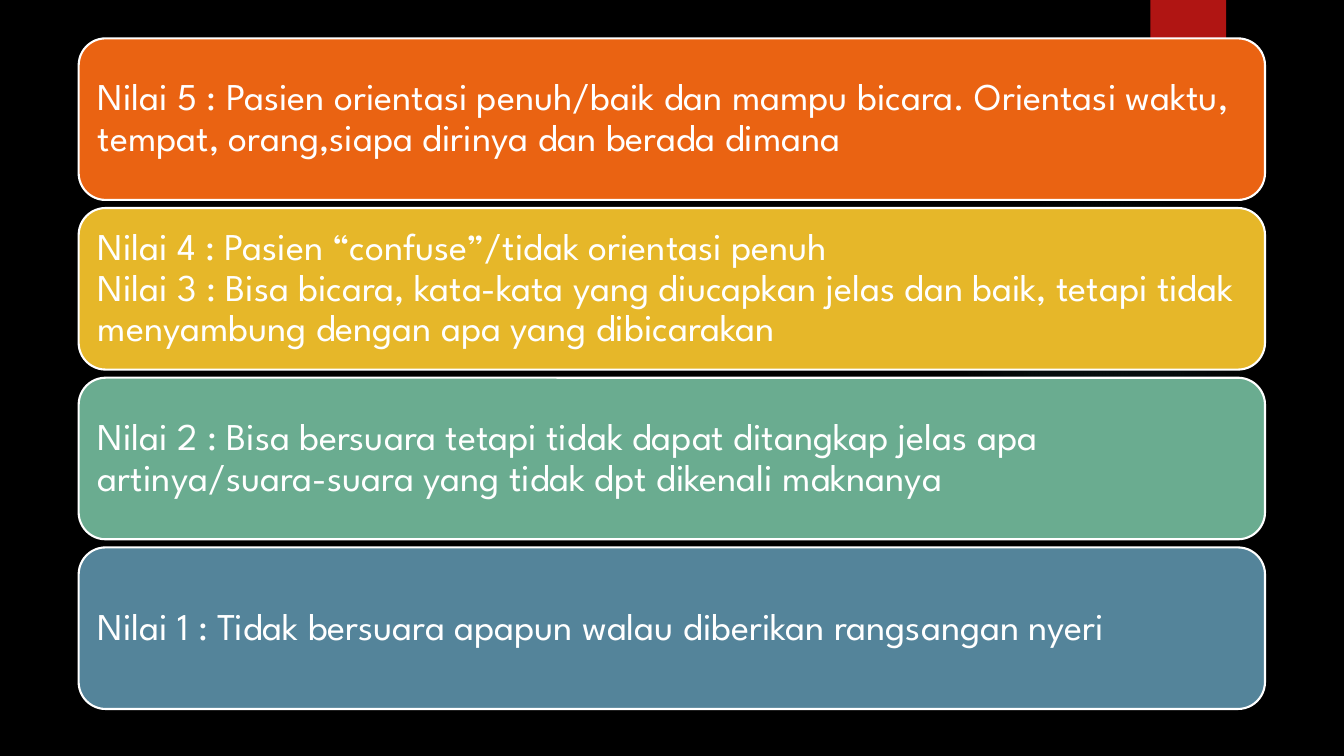
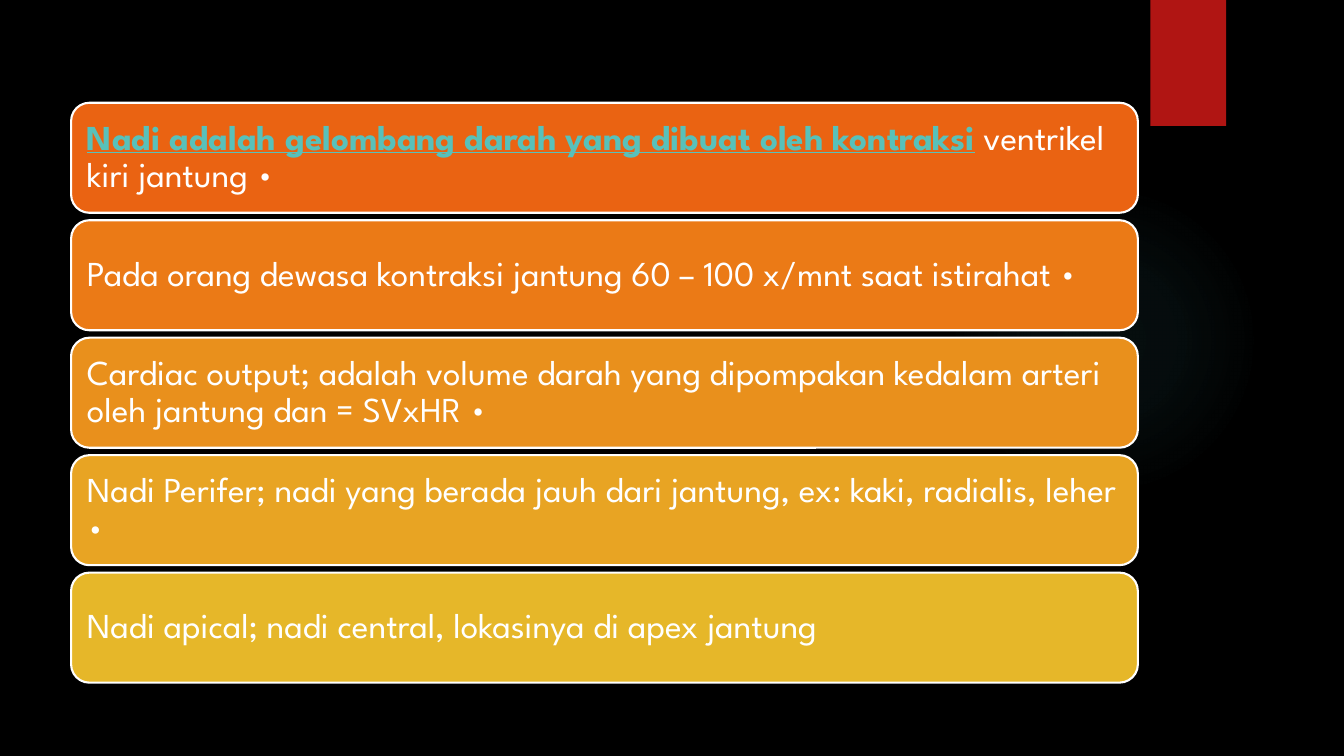
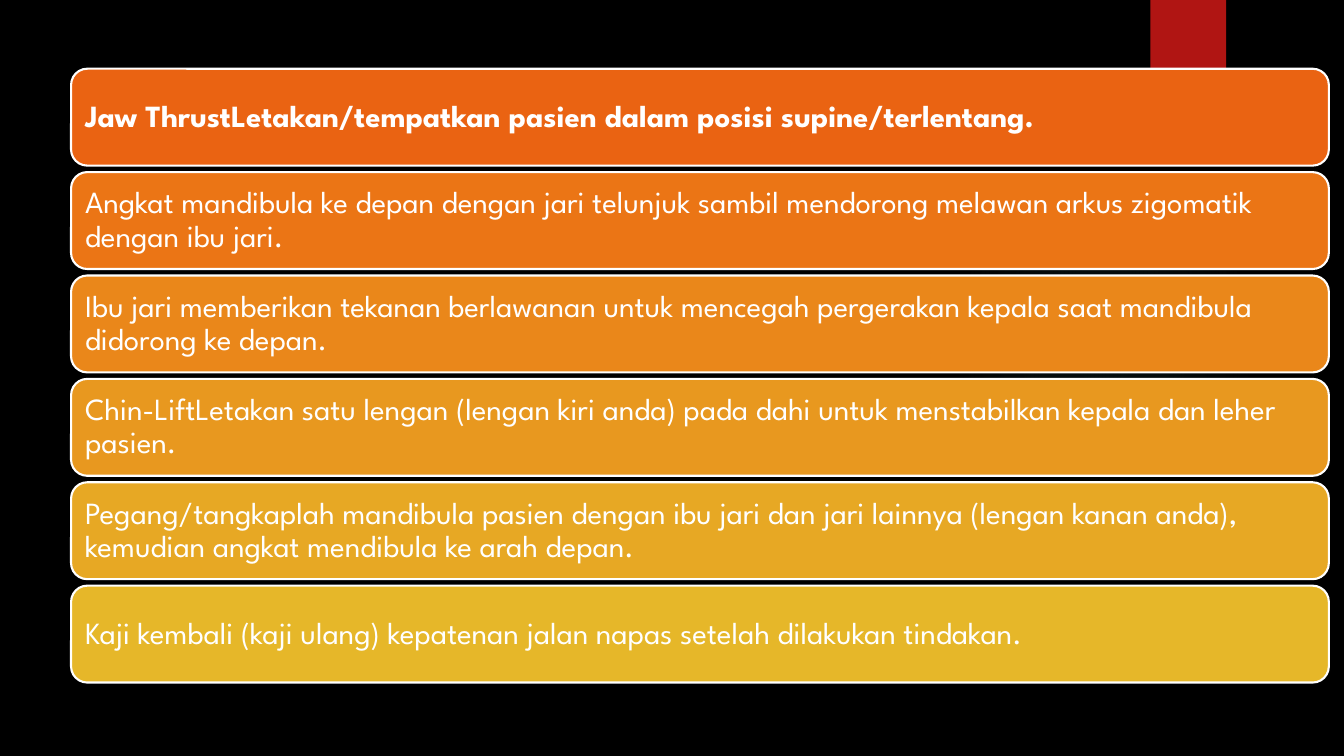
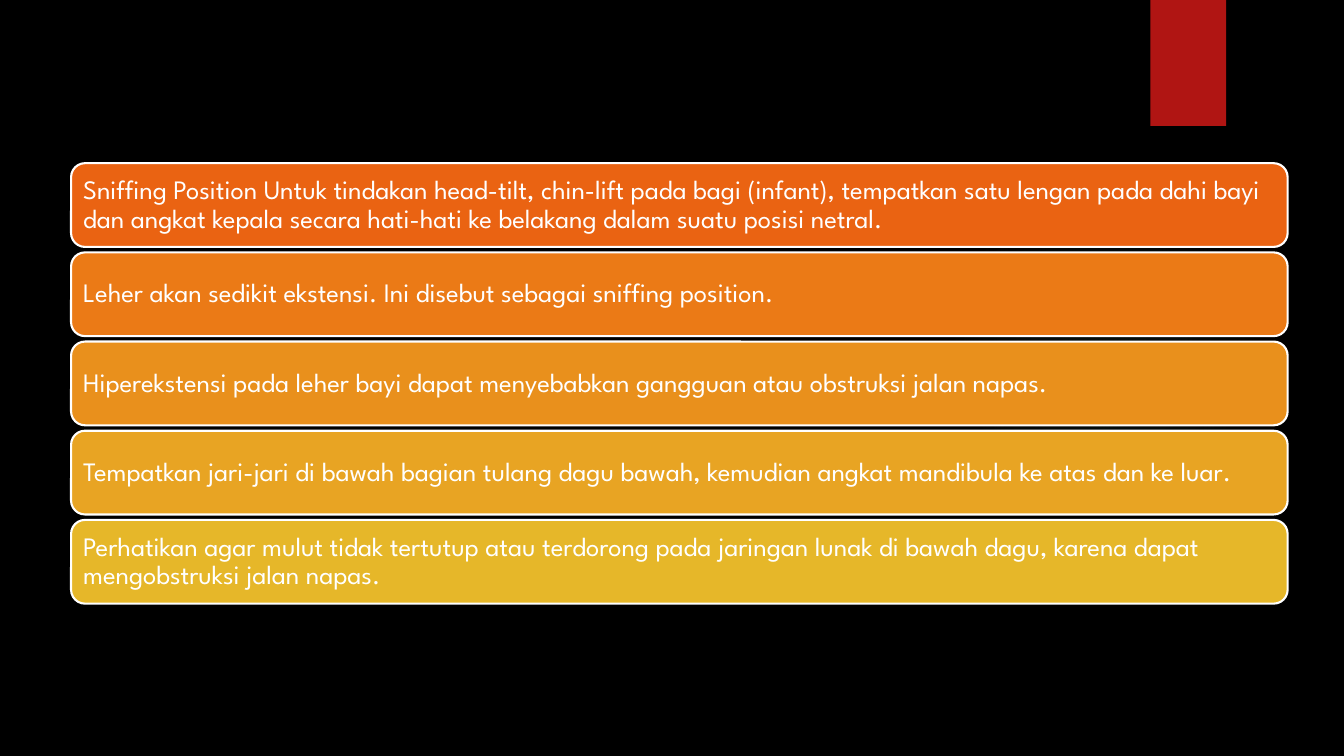
from pptx import Presentation
from pptx.dml.color import RGBColor
from pptx.enum.shapes import MSO_SHAPE
from pptx.enum.text import MSO_ANCHOR, PP_ALIGN
from pptx.oxml import parse_xml
from pptx.util import Pt

OVAL = MSO_SHAPE.OVAL
RECTANGLE = MSO_SHAPE.RECTANGLE
ROUNDED = MSO_SHAPE.ROUNDED_RECTANGLE
MIDDLE = MSO_ANCHOR.MIDDLE
LEFT = PP_ALIGN.LEFT

FONT = "League Spartan"
BLACK = "000000"
WHITE = "FFFFFF"
RED = "B01513"
TEAL = "58C1BA"
FIVE_STEPS = ["EA6312", "EB7A16", "E9901C", "E8A423", "E6B729"]
SIX_STEPS = ["EA6312", "EB7515", "EA871A", "E8981F", "E7A824", "E6B729"]

GLOW_FILL = """
<a:gradFill xmlns:a="http://schemas.openxmlformats.org/drawingml/2006/main">
  <a:gsLst>
    <a:gs pos="0"><a:srgbClr val="50B9C1"><a:alpha val="7000"/></a:srgbClr></a:gs>
    <a:gs pos="36000"><a:srgbClr val="50B9C1"><a:alpha val="6000"/></a:srgbClr></a:gs>
    <a:gs pos="69000"><a:srgbClr val="50B9C1"><a:alpha val="0"/></a:srgbClr></a:gs>
  </a:gsLst>
  <a:path path="circle"><a:fillToRect l="50000" t="50000" r="50000" b="50000"/></a:path>
</a:gradFill>
"""

# A "|" ends the opening run of a panel, "\v" breaks a line.
SLIDES = [
    {
        "left": 56.2, "top": 27.4, "width": 847.4, "height": 115.4, "pitch": 121.2,
        "size": 27,
        "colors": ["EA6312", "E6B729", "6AAC90", "54849A"],
        "texts": [
            "Nilai 5 : Pasien orientasi penuh/baik dan mampu bicara. Orientasi waktu, "
            "tempat, orang,siapa dirinya dan berada dimana",
            "Nilai 4 : Pasien “confuse”/tidak orientasi penuh\v"
            "Nilai 3 : Bisa bicara, kata-kata yang diucapkan jelas dan baik, tetapi "
            "tidak menyambung dengan apa yang dibicarakan",
            "Nilai 2 : Bisa bersuara tetapi tidak dapat ditangkap jelas apa "
            "artinya/suara-suara yang tidak dpt dikenali maknanya",
            "Nilai 1 : Tidak bersuara apapun walau diberikan rangsangan nyeri",
        ],
    },
    {
        "left": 50.8, "top": 73.4, "width": 762, "height": 78.6, "pitch": 83.9,
        "size": 25,
        "colors": FIVE_STEPS,
        "texts": [
            "Nadi adalah gelombang darah yang dibuat oleh kontraksi|"
            " ventrikel kiri jantung •",
            "Pada orang dewasa kontraksi jantung 60 – 100 x/mnt saat istirahat •",
            "Cardiac output; adalah volume darah yang dipompakan kedalam arteri oleh "
            "jantung dan = SVxHR •",
            "Nadi Perifer; nadi yang berada jauh dari jantung, ex: kaki, radialis, leher •",
            "Nadi apical; nadi central, lokasinya di apex jantung",
        ],
    },
    {
        "left": 50.8, "top": 49.1, "width": 898.4, "height": 69.2, "pitch": 73.85,
        "size": 22,
        "colors": SIX_STEPS,
        "texts": [
            "Jaw ThrustLetakan/tempatkan pasien dalam posisi supine/terlentang.",
            "Angkat mandibula ke depan dengan jari telunjuk sambil mendorong melawan "
            "arkus zigomatik dengan ibu jari.",
            "Ibu jari memberikan tekanan berlawanan untuk mencegah pergerakan kepala "
            "saat mandibula didorong ke depan.",
            "Chin-LiftLetakan satu lengan (lengan kiri anda) pada dahi untuk "
            "menstabilkan kepala dan leher pasien.",
            "Pegang/tangkaplah mandibula pasien dengan ibu jari dan jari lainnya "
            "(lengan kanan anda), kemudian angkat mendibula ke arah depan.",
            "Kaji kembali (kaji ulang) kepatenan jalan napas setelah dilakukan tindakan.",
        ],
    },
    {
        "left": 50.8, "top": 116.6, "width": 869, "height": 59.8, "pitch": 63.7,
        "size": 19,
        "colors": FIVE_STEPS,
        "texts": [
            "Sniffing Position Untuk tindakan head-tilt, chin-lift pada bagi (infant), "
            "tempatkan satu lengan pada dahi bayi dan angkat kepala secara hati-hati ke "
            "belakang dalam suatu posisi netral.",
            "Leher akan sedikit ekstensi. Ini disebut sebagai sniffing position.",
            "Hiperekstensi pada leher bayi dapat menyebabkan gangguan atau obstruksi "
            "jalan napas.",
            "Tempatkan jari-jari di bawah bagian tulang dagu bawah, kemudian angkat "
            "mandibula ke atas dan ke luar.",
            "Perhatikan agar mulut tidak tertutup atau terdorong pada jaringan lunak di "
            "bawah dagu, karena dapat mengobstruksi jalan napas.",
        ],
    },
]


def paint(target, color):
    """Give a fill or a font one solid colour."""
    if hasattr(target, "solid"):
        target.solid()
        target.fore_color.rgb = RGBColor.from_string(color)
    else:
        target.color.rgb = RGBColor.from_string(color)


def add_flat_shape(slide, kind, left, top, width, height, color):
    """Add a preset shape without shadow and outline."""
    shape = slide.shapes.add_shape(kind, Pt(left), Pt(top), Pt(width), Pt(height))
    shape.shadow.inherit = False
    shape.line.fill.background()
    paint(shape.fill, color)
    return shape


presentation = Presentation()
presentation.slide_width = Pt(960)
presentation.slide_height = Pt(540)
layout = presentation.slide_layouts[6]
paint(presentation.slide_master.background.fill, BLACK)
for placeholder in list(layout.placeholders):
    layout.shapes.element.remove(placeholder.element)

slides = [presentation.slides.add_slide(layout) for _ in SLIDES]

# The glow and the red tab move to the layout, so every slide shows them.
glow = add_flat_shape(slides[0], OVAL, 677.5, 131.8, 221.8, 221.8, BLACK)
solid_fill = glow.element.spPr.find("{*}solidFill")
glow.element.spPr.replace(solid_fill, parse_xml(GLOW_FILL))
tab = add_flat_shape(slides[0], RECTANGLE, 821.8, 0, 54, 90, RED)
for shape in (glow, tab):
    layout.shapes.element.append(shape.element)

opening_runs = []
for slide, content in zip(slides, SLIDES):
    size = content["size"]
    for row, (text, color) in enumerate(zip(content["texts"], content["colors"])):
        panel = add_flat_shape(
            slide, ROUNDED, content["left"], content["top"] + row * content["pitch"],
            content["width"], content["height"], color)
        paint(panel.line.fill, WHITE)
        panel.line.width = Pt(1.5)

        frame = panel.text_frame
        frame.word_wrap = True
        frame.vertical_anchor = MIDDLE
        frame.margin_left = frame.margin_right = Pt(0.3 * size)
        frame.margin_top = frame.margin_bottom = Pt(0.3 * size)

        opening, _, rest = text.partition("|")
        paragraph = frame.paragraphs[0]
        paragraph.text = opening
        if rest:
            paragraph.add_run().text = rest
        paragraph.alignment = LEFT
        paragraph.line_spacing = 0.9
        for run in paragraph.runs:
            run.font.name = FONT
            run.font.size = Pt(size)
            paint(run.font, WHITE)
        if row == 0:
            opening_runs.append(paragraph.runs[0])

pulse_definition, jaw_thrust = opening_runs[1:3]
pulse_definition.font.bold = True
pulse_definition.font.underline = True
paint(pulse_definition.font, TEAL)
jaw_thrust.font.bold = True

presentation.save("out.pptx")
